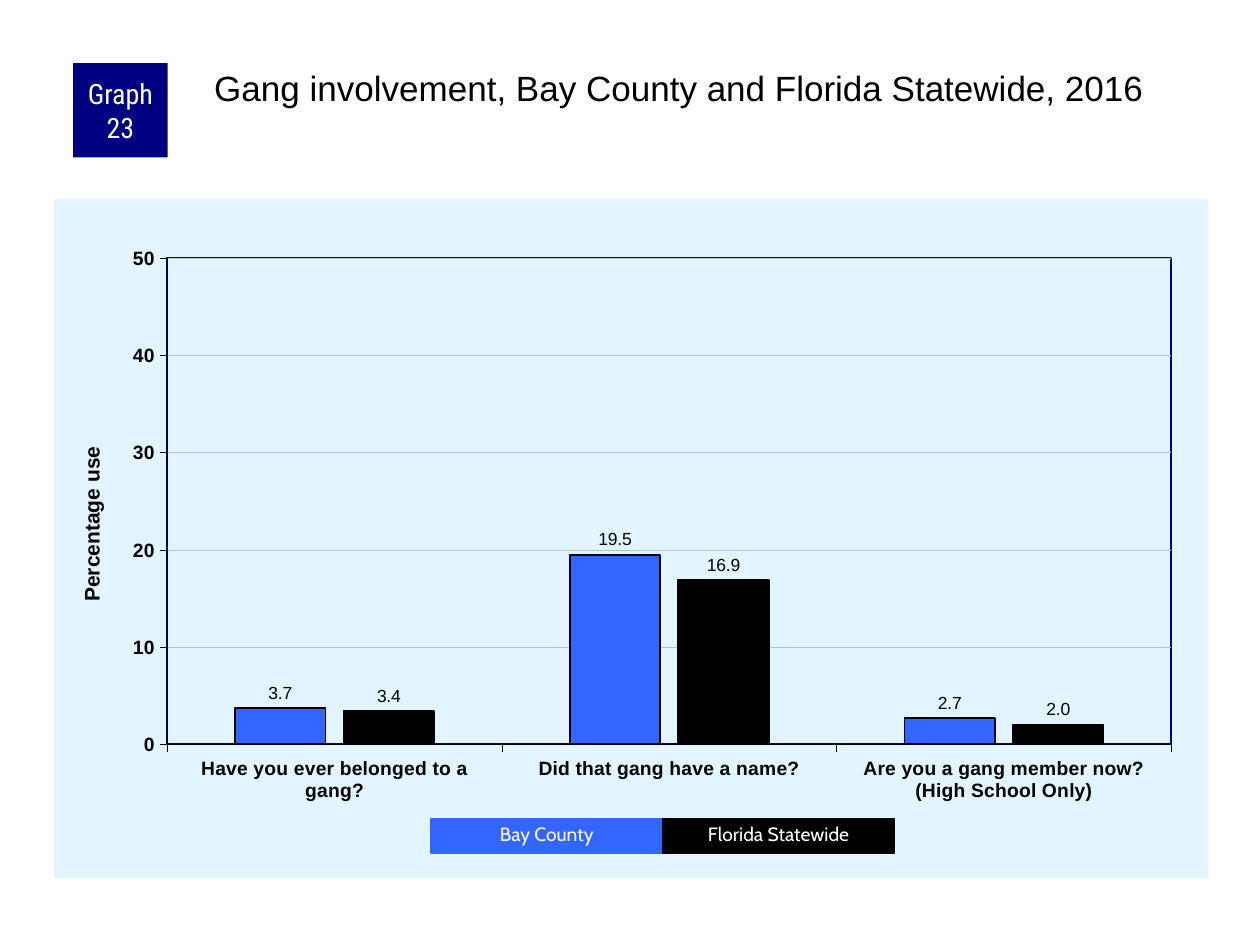
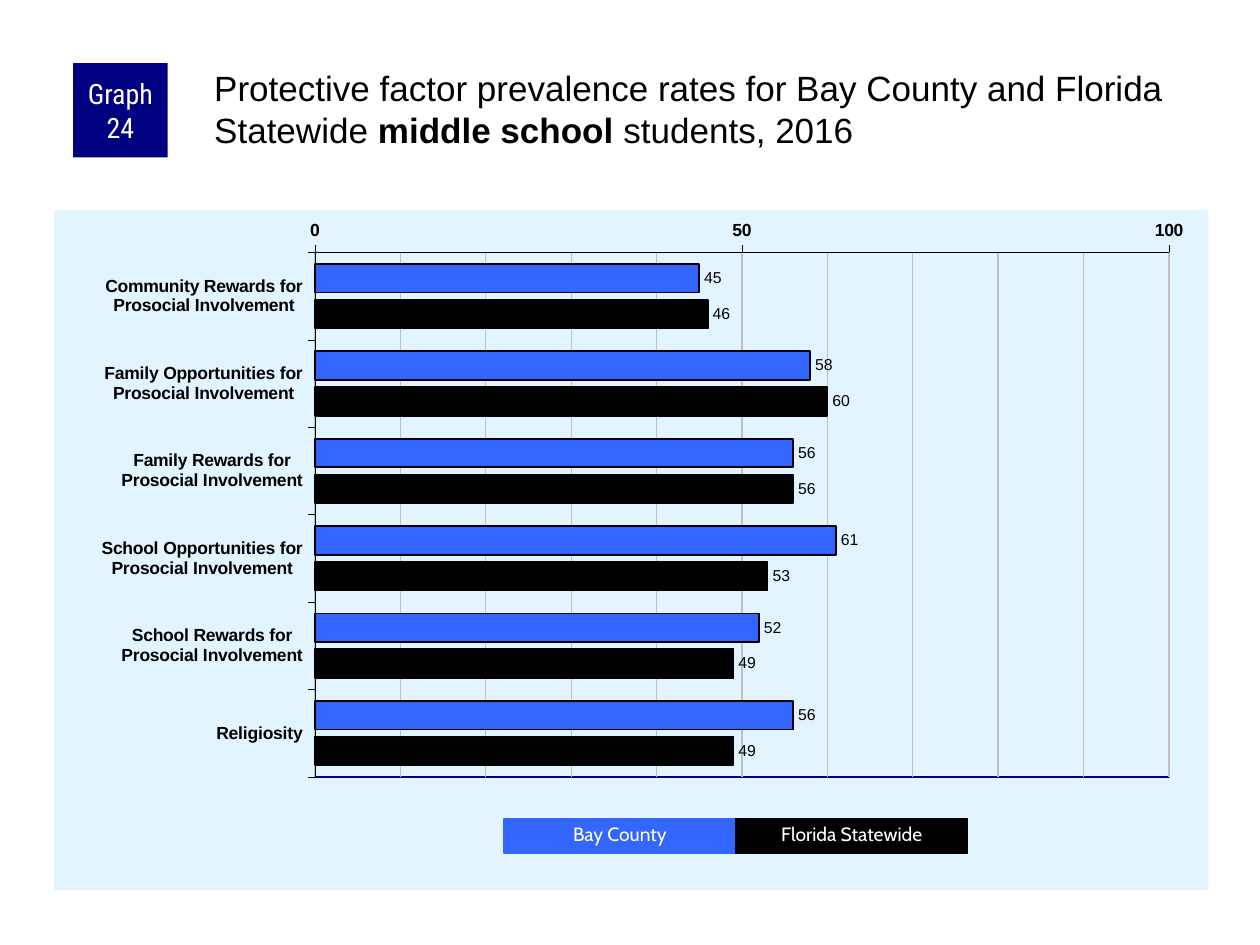
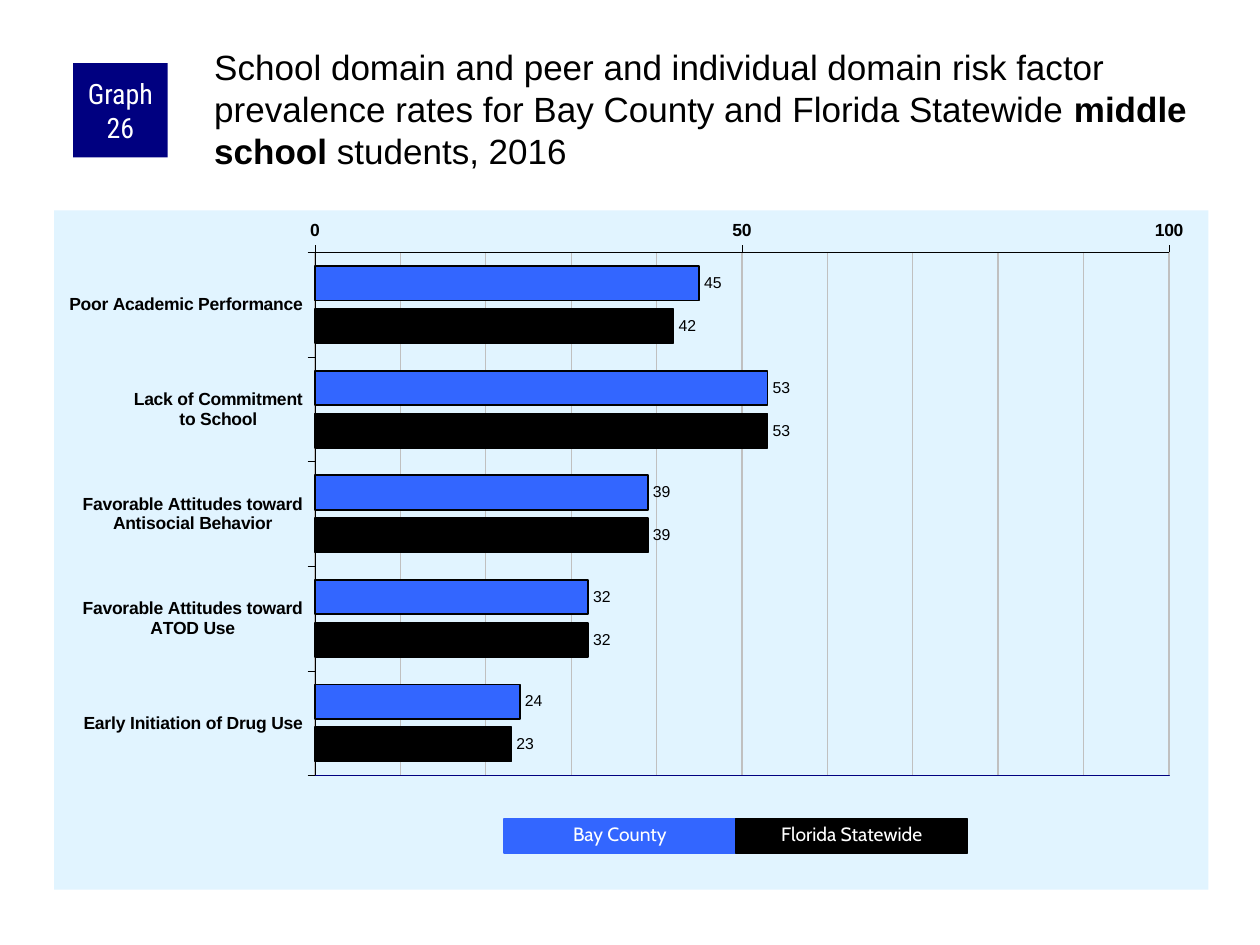
from lxml import etree
from pptx import Presentation
from pptx import util as u
from pptx.chart.data import CategoryChartData
from pptx.dml.color import RGBColor
from pptx.enum import chart as ch, shapes, text
from pptx.oxml import parse_xml
from pptx.oxml.ns import nsdecls, qn

COLORS = {"navy": "000080", "blue": "3366FF", "black": "000000",
          "white": "FFFFFF", "panel": "E1F4FF", "grid": "C0C0C0"}
REGIONS = [("Bay County", "blue"), ("Florida Statewide", "black")]
BODY, BADGE, LEGEND = "Arial", "Roboto Condensed", "Cabin"
KEY_W, KEY_H, KEY_TOP = 1.84, 0.27, 6.5


def rgb(name):
    return RGBColor.from_string(COLORS[name])


def style_font(font, size, color="black", bold=False, name=BODY):
    font.name, font.size, font.bold = name, u.Pt(size), bold
    font.color.rgb = rgb(color)


def style_line(line, color, width):
    line.color.rgb = rgb(color)
    line.width = u.Pt(width)


# Text and boxes
def add_runs(tf, runs, size, color, name):
    p = tf.paragraphs[0]
    for words, bold in runs:
        r = p.add_run()
        r.text = words
        style_font(r.font, size, color, bold, name)
    return p


def set_insets(tf, left, top, right, bottom):
    tf.margin_left, tf.margin_top = u.Inches(left), u.Inches(top)
    tf.margin_right, tf.margin_bottom = u.Inches(right), u.Inches(bottom)


def add_box(s, left, top, width, height, fill, label, size, font):
    sp = s.shapes.add_shape(shapes.MSO_SHAPE.RECTANGLE, u.Inches(left), u.Inches(top),
                            u.Inches(width), u.Inches(height))
    sp.shadow.inherit = False
    sp.fill.solid()
    sp.fill.fore_color.rgb = rgb(fill)
    sp.line.fill.background()
    sp.text_frame.word_wrap = True
    p = add_runs(sp.text_frame, [(label, False)], size, "white", font)
    p.alignment = text.PP_ALIGN.CENTER
    return sp


def add_badge(s, number):
    sp = add_box(s, 0.58, 0.5, 0.75, 0.75, "navy", f"Graph {number}", 16, BADGE)
    set_insets(sp.text_frame, 0.05, 0, 0.05, 0)
    sp.text_frame.vertical_anchor = text.MSO_ANCHOR.MIDDLE


def add_title(s, runs, top):
    tb = s.shapes.add_textbox(u.Inches(1.67), u.Inches(top), u.Inches(7.92), u.Inches(0.83))
    tf = tb.text_frame
    tf.word_wrap = True
    set_insets(tf, 0.03, 0.03, 0, 0)
    add_runs(tf, runs, 20, "black", BODY)


def add_legend(s, left):
    for i, (region, color) in enumerate(REGIONS):
        sp = add_box(s, left + i * KEY_W, KEY_TOP, KEY_W, KEY_H, color, region, 11, LEGEND)
        style_line(sp.line, color, 0.75)
        tf = sp.text_frame
        tf.vertical_anchor = text.MSO_ANCHOR.TOP
        tf.auto_size = text.MSO_AUTO_SIZE.SHAPE_TO_FIT_TEXT
        tf.paragraphs[0].line_spacing = 0.9


# Charts
def chart_sp_pr(fill, line_color=None, width=0):
    """Fill and outline of a chart part; None means no paint."""
    def paint(color):
        if color is None:
            return "<a:noFill/>"
        return f'<a:solidFill><a:srgbClr val="{COLORS[color]}"/></a:solidFill>'
    return parse_xml(f'<c:spPr {nsdecls("c", "a")}>{paint(fill)}'
                     f'<a:ln w="{u.Pt(width)}">{paint(line_color)}</a:ln></c:spPr>')


def place_plot(chart, plot_box):
    """Fix the inner plot area, frame it in navy and fill the chart panel."""
    area = chart._chartSpace.find(".//" + qn("c:plotArea"))
    for old in area.findall(qn("c:layout")):
        area.remove(old)
    layout = parse_xml(f'<c:layout {nsdecls("c")}><c:manualLayout/></c:layout>')
    settings = [("layoutTarget", "inner"), ("xMode", "edge"), ("yMode", "edge")]
    settings += zip("xywh", map(str, plot_box))
    for tag, val in settings:
        etree.SubElement(layout[0], qn("c:" + tag)).set("val", val)
    area.insert(0, layout)
    area.append(chart_sp_pr(None, "navy", 1))
    area.getparent().addnext(chart_sp_pr("panel"))


def style_axis(axis, size):
    axis.major_tick_mark = ch.XL_TICK_MARK.OUTSIDE
    axis.minor_tick_mark = ch.XL_TICK_MARK.NONE
    style_font(axis.tick_labels.font, size, bold=True)
    style_line(axis.format.line, "black", 0.25)


def add_rate_chart(s, kind, top, cats, values, plot_box, gap, overlap, top_value, step,
                   axis_size, label_size, label_format, grid_width):
    data = CategoryChartData()
    data.categories = cats
    for (region, _), vals in zip(REGIONS, values):
        data.add_series(region, vals)
    chart = s.shapes.add_chart(kind, u.Inches(0.43), u.Inches(top), u.Inches(9.16),
                               u.Inches(5.39), data).chart
    chart.has_title = chart.has_legend = False
    style_font(chart.font, 11.5)
    plot = chart.plots[0]
    plot.vary_by_categories = False
    plot.gap_width, plot.overlap = gap, overlap
    for series, (_, color) in zip(plot.series, REGIONS):
        series.format.fill.solid()
        series.format.fill.fore_color.rgb = rgb(color)
        style_line(series.format.line, "black", 1)
        labels = series.data_labels
        labels.show_value = True
        labels.number_format, labels.number_format_is_linked = label_format, False
        labels.position = ch.XL_LABEL_POSITION.OUTSIDE_END
        style_font(labels.font, label_size)
    axis = chart.value_axis
    axis.minimum_scale, axis.maximum_scale, axis.major_unit = 0, top_value, step
    axis.has_major_gridlines = True
    style_line(axis.major_gridlines.format.line, "grid", grid_width)
    style_axis(axis, axis_size)
    style_axis(chart.category_axis, axis_size)
    place_plot(chart, plot_box)
    return chart


def add_column_chart(s, cats, values):
    chart = add_rate_chart(s, ch.XL_CHART_TYPE.COLUMN_CLUSTERED, 1.58, cats, values,
                           (0.098, 0.087, 0.87, 0.716), 150, -20, 50, 10, 11, 10, "0.0", 0.25)
    tf = chart.value_axis.axis_title.text_frame
    add_runs(tf, [("Percentage use", True)], 12, "black", BODY)


def add_bar_chart(s, cats, values, plot_height):
    chart = add_rate_chart(s, ch.XL_CHART_TYPE.BAR_CLUSTERED, 1.67, cats, values,
                           (0.226, 0.062, 0.74, plot_height), 80, -25, 100, 50, 10, 9, "0", 1)
    # First category on top, value scale at the bottom
    chart.category_axis.reverse_order = True
    chart.category_axis.crosses = ch.XL_AXIS_CROSSES.MAXIMUM
    # Fine grid between the labelled steps
    axis = chart.value_axis
    axis.minor_unit = 10
    axis.has_minor_gridlines = True
    minor_grid = chart._chartSpace.find(".//" + qn("c:minorGridlines"))
    minor_grid.append(chart_sp_pr(None, "grid", 0.75))


def add_graph_slide(prs, number, title, draw_chart, chart_args, title_top=0.5, legend_left=4):
    s = prs.slides.add_slide(prs.slide_layouts[6])
    draw_chart(s, *chart_args)
    add_badge(s, number)
    add_title(s, title, title_top)
    add_legend(s, legend_left)


def main():
    prs = Presentation()
    prs.slide_width, prs.slide_height = u.Inches(10), u.Inches(7.5)

    # Gang involvement
    add_graph_slide(
        prs, 23, [("Gang involvement, Bay County and Florida Statewide, 2016", False)],
        add_column_chart,
        (["Have you ever belonged to a gang?", "Did that gang have a name?",
          "Are you a gang member now?\n(High School Only)"],
         [(3.7, 19.5, 2.7), (3.4, 16.9, 2.0)]),
        legend_left=3.42)

    # Protective factors
    involvement = [f"{factor} for\nProsocial Involvement" for factor in (
        "Community Rewards", "Family Opportunities", "Family Rewards",
        "School Opportunities", "School Rewards")]
    add_graph_slide(
        prs, 24,
        [("Protective factor prevalence rates for Bay County and Florida Statewide ", False),
         ("middle school ", True), ("students, 2016", False)],
        add_bar_chart,
        (involvement + ["Religiosity"],
         [(45, 58, 56, 61, 52, 56), (46, 60, 56, 53, 49, 49)], 0.772))

    # Risk factors
    add_graph_slide(
        prs, 26,
        [("School domain and peer and individual domain risk factor prevalence rates "
          "for Bay County and Florida Statewide ", False),
         ("middle school", True), (" students, 2016", False)],
        add_bar_chart,
        (["Poor Academic Performance", "Lack of Commitment\nto School",
          "Favorable Attitudes toward\nAntisocial Behavior",
          "Favorable Attitudes toward\nATOD Use", "Early Initiation of Drug Use"],
         [(45, 53, 39, 32, 24), (42, 53, 39, 32, 23)], 0.77),
        title_top=0.33)

    prs.save("out.pptx")


if __name__ == "__main__":
    main()
